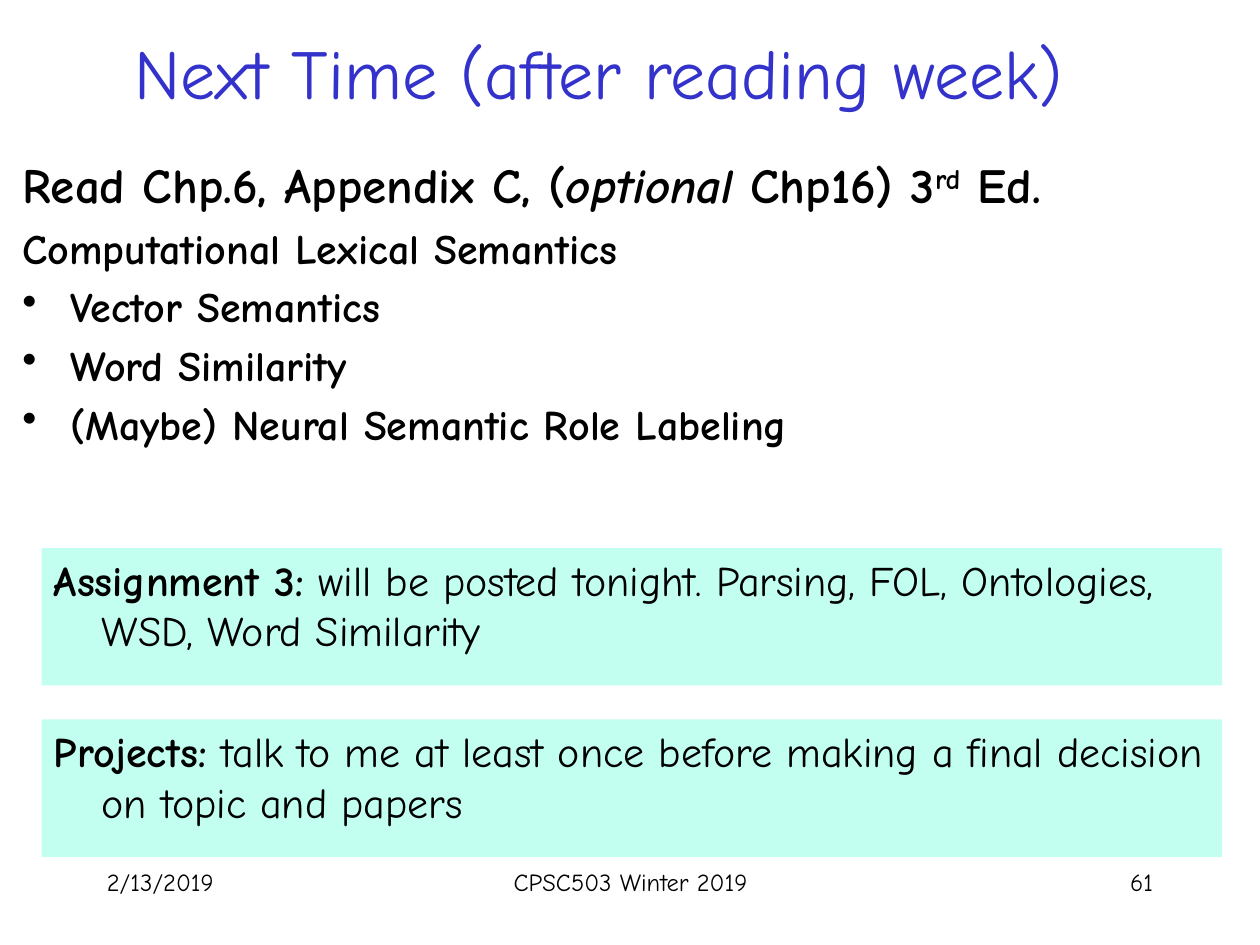
from dataclasses import dataclass

from lxml import etree
from pptx import Presentation
from pptx.dml.color import RGBColor
from pptx.enum.shapes import MSO_SHAPE
from pptx.enum.text import MSO_ANCHOR, PP_ALIGN
from pptx.oxml.ns import qn
from pptx.util import Inches, Pt

LEFT, CENTER, RIGHT = PP_ALIGN.LEFT, PP_ALIGN.CENTER, PP_ALIGN.RIGHT
TOP, MIDDLE = MSO_ANCHOR.TOP, MSO_ANCHOR.MIDDLE
RECTANGLE = MSO_SHAPE.RECTANGLE
TITLE_ONLY = 5


@dataclass(frozen=True)
class Theme:
    font: str = "Comic Neue"
    ink: RGBColor = RGBColor(0x00, 0x00, 0x00)
    heading: RGBColor = RGBColor(0x33, 0x33, 0xCC)
    notice: RGBColor = RGBColor(0xC2, 0xFF, 0xF0)
    title_size: int = 40
    reading_size: int = 28
    body_size: int = 24
    footer_size: int = 14
    hanging: float = 0.38
    gap_ratio: float = 0.2


THEME = Theme()


@dataclass(frozen=True)
class Span:
    text: str
    bold: bool = False
    italic: bool = False
    superscript: bool = False


@dataclass(frozen=True)
class Line:
    spans: tuple[Span, ...]
    size: int = THEME.body_size
    bullet: bool = False
    hanging: bool = True


@dataclass(frozen=True)
class Notice:
    top: float
    label: str
    message: str


@dataclass(frozen=True)
class Footer:
    left: float
    width: float
    text: str
    align: PP_ALIGN


READING = (
    Line((Span("Read Chp.6, Appendix C, (", bold=True),
          Span("optional", bold=True, italic=True),
          Span(" Chp16) 3", bold=True),
          Span("rd", bold=True, superscript=True),
          Span(" Ed.", bold=True)), THEME.reading_size),
    Line((Span("Computational Lexical Semantics", bold=True),)),
    *(Line((Span(topic, bold=True),), bullet=True) for topic in (
        "Vector Semantics",
        "Word Similarity",
        "(Maybe) Neural Semantic Role Labeling")),
)

NOTICES = (
    Notice(4.35, "Assignment 3: ",
           "will be posted tonight. Parsing, FOL, Ontologies, WSD, Word Similarity"),
    Notice(5.71, "Projects: ",
           "talk to me at least once before making a final decision on topic and papers"),
)

FOOTERS = (
    Footer(0.75, 2.08, "2/13/2019", LEFT),
    Footer(3.42, 3.17, "CPSC503 Winter 2019", CENTER),
    Footer(7.17, 2.08, "61", RIGHT),
)


def write(shape, lines: tuple[Line, ...], *, align=LEFT, anchor=TOP, color=THEME.ink) -> None:
    frame = shape.text_frame
    frame.word_wrap = True
    frame.vertical_anchor = anchor
    for index, line in enumerate(lines):
        paragraph = frame.add_paragraph() if index else frame.paragraphs[0]
        paragraph.alignment = align
        properties = paragraph._p.get_or_add_pPr()
        if line.hanging:
            properties.set("marL", str(Inches(THEME.hanging)))
            properties.set("indent", str(-Inches(THEME.hanging)))
        if line.bullet:
            etree.SubElement(properties, qn("a:buChar")).set("char", "•")
        if index:
            paragraph.space_before = Pt(line.size * THEME.gap_ratio)
        for span in line.spans:
            run = paragraph.add_run()
            run.text = span.text
            run.font.name = THEME.font
            run.font.size = Pt(line.size)
            run.font.bold = span.bold
            run.font.italic = span.italic
            run.font.color.rgb = color
            if span.superscript:
                run._r.get_or_add_rPr().set("baseline", "30000")


def draw_title(slide, text: str) -> None:
    title = slide.shapes.title
    title.left, title.top = Inches(0.5), Inches(-0.06)
    title.width, title.height = Inches(8.5), Inches(1.25)
    heading = Line((Span(text),), THEME.title_size, hanging=False)
    write(title, (heading,), align=CENTER, anchor=MIDDLE, color=THEME.heading)


def draw_notice(slide, notice: Notice) -> None:
    panel = slide.shapes.add_shape(
        RECTANGLE, Inches(0.33), Inches(notice.top), Inches(9.37), Inches(1.09))
    panel.shadow.inherit = False
    panel.fill.solid()
    panel.fill.fore_color.rgb = THEME.notice
    panel.line.fill.background()
    write(panel, (Line((Span(notice.label, bold=True), Span(notice.message))),))


def draw_footer(slide, footer: Footer) -> None:
    box = slide.shapes.add_textbox(
        Inches(footer.left), Inches(6.83), Inches(footer.width), Inches(0.5))
    caption = Line((Span(footer.text),), THEME.footer_size, hanging=False)
    write(box, (caption,), align=footer.align)


def main() -> None:
    deck = Presentation()
    deck.slide_width, deck.slide_height = Inches(10), Inches(7.5)
    slide = deck.slides.add_slide(deck.slide_layouts[TITLE_ONLY])
    draw_title(slide, "Next Time (after reading week)")
    reading = slide.shapes.add_textbox(Inches(0.08), Inches(1.18), Inches(9.92), Inches(3.12))
    write(reading, READING)
    for notice in NOTICES:
        draw_notice(slide, notice)
    for footer in FOOTERS:
        draw_footer(slide, footer)
    deck.save("out.pptx")


if __name__ == "__main__":
    main()
